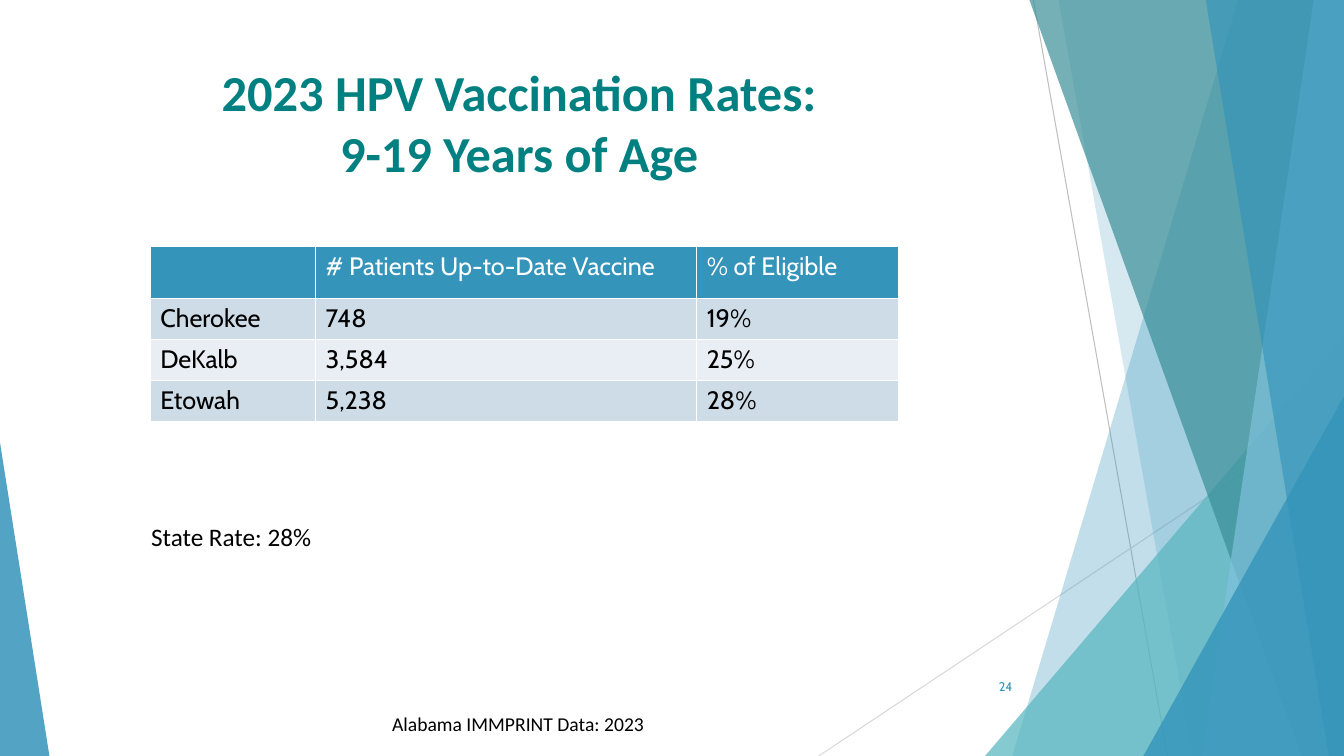
from lxml.etree import SubElement
from pptx import Presentation
from pptx.dml.color import RGBColor
from pptx.enum.shapes import MSO_CONNECTOR as Link, MSO_SHAPE as Shape
from pptx.enum.text import MSO_ANCHOR as Anchor, PP_ALIGN as Align
from pptx.oxml.ns import qn
from pptx.util import Inches, Pt

WIDTH, HEIGHT = 13.33, 7.5
BLUE, TEAL, BLACK, WHITE = "3494BA", "008080", "000000", "FFFFFF"
BANDS = ["CEDCE7", "E8EEF3"]
ROWS = [
    ["", "# Patients Up-to-Date Vaccine", "% of Eligible"],
    ["Cherokee", "748", "19%"],
    ["DeKalb", "3,584", "25%"],
    ["Etowah", "5,238", "28%"],
]


def color(code):
    return RGBColor.from_string(code)


def paint(shape, code, alpha):
    """Fill a shape without outline or shadow; alpha is in percent."""
    shape.shadow.inherit = False
    shape.line.fill.background()
    shape.fill.solid()
    shape.fill.fore_color.rgb = color(code)
    tone = shape.fill._xPr.find(".//" + qn("a:srgbClr"))
    SubElement(tone, qn("a:alpha")).set("val", str(alpha * 1000))


def style(para, size, face, code, bold=False, align=Align.LEFT):
    para.alignment = align
    font = para.font
    font.size, font.name, font.bold = Pt(size), face, bold
    font.color.rgb = color(code)


def ray(slide, start, end, code):
    line = slide.shapes.add_connector(
        Link.STRAIGHT, *(Inches(n) for n in (*start, *end)))
    line.line.width = Pt(0.75)
    line.line.color.rgb = color(code)
    SubElement(line._element.spPr, qn("a:effectLst"))


def slab(slide, head, foot, right, top, bottom, code, alpha):
    """Draw a slanted sheet that reaches the right edge."""
    points = [(Inches(x), Inches(y)) for x, y in (
        (head, top), (right, top), (right, bottom), (foot, bottom))]
    build = slide.shapes.build_freeform(*points[0])
    build.add_line_segments(points[1:], close=True)
    paint(build.convert_to_shape(), code, alpha)


def wedge(slide, left, top, width, height, peak, code, alpha):
    shape = slide.shapes.add_shape(
        Shape.ISOSCELES_TRIANGLE,
        *(Inches(n) for n in (left, top, width, height)))
    shape.adjustments[0] = peak
    paint(shape, code, alpha)


def add_decor(slide, left, top, width, height):
    """Rays and sheets on the right, one wedge on the left."""
    right, bottom = left + width, top + height

    def sheet(head, foot, code, alpha):
        slab(slide, right - head, right - foot, right, top, bottom,
             code, alpha)

    def corner(wide, high, code, alpha):
        wedge(slide, right - wide, bottom - high, wide, high, 1, code, alpha)

    ray(slide, (right - 3.08, top), (right - 1.75, bottom), "BFBFBF")
    ray(slide, (right, top + 4.03), (right - 5.21, bottom), "D9D9D9")
    sheet(1.05, 3.29, BLUE, 30)
    sheet(2.83, 1.5, BLUE, 20)
    corner(3.56, 4.17, "58B6C0", 72)
    sheet(3.12, 0.42, "3A8F98", 70)
    sheet(0.3, 1.41, "7FC1DB", 70)
    sheet(1.37, 0.15, BLUE, 65)
    corner(1.99, 3.57, BLUE, 80)
    wedge(slide, left, bottom - 3.11, 0.49, 3.11, 0, BLUE, 85)


def add_title(slide, left, top, width, height, text):
    title = slide.shapes.title
    title.left, title.top = Inches(left), Inches(top)
    title.width, title.height = Inches(width), Inches(height)
    frame = title.text_frame
    frame.vertical_anchor = Anchor.MIDDLE
    para = frame.paragraphs[0]
    para.text = text
    style(para, 36, "Calibri", TEAL, True, Align.CENTER)


def add_rates(slide, left, top, width, height):
    """Table of counties; the last column and rows share what is left."""
    table = slide.shapes.add_table(
        len(ROWS), len(ROWS[0]),
        *(Inches(n) for n in (left, top, width, height))).table
    first, second, head = 1.64, 3.78, 0.52
    for col, size in zip(table.columns, (first, second,
                                         width - first - second)):
        col.width = Inches(size)
    for i, row in enumerate(ROWS):
        table.rows[i].height = Inches(
            (height - head) / (len(ROWS) - 1) if i else head)
        for j, text in enumerate(row):
            cell = table.cell(i, j)
            cell.fill.solid()
            cell.fill.fore_color.rgb = color(
                BANDS[(i - 1) % 2] if i else BLUE)
            para = cell.text_frame.paragraphs[0]
            para.text = text
            style(para, 18, "Cabin", BLACK if i else WHITE)


def add_note(slide, left, top, width, height, text, size,
             face="Calibri", code=BLACK, align=Align.LEFT, anchor=Anchor.TOP):
    frame = slide.shapes.add_textbox(
        *(Inches(n) for n in (left, top, width, height))).text_frame
    frame.word_wrap = True
    frame.vertical_anchor = anchor
    para = frame.paragraphs[0]
    para.text = text
    style(para, size, face, code, align=align)


def main():
    deck = Presentation()
    deck.slide_width, deck.slide_height = Inches(WIDTH), Inches(HEIGHT)
    slide = deck.slides.add_slide(deck.slide_layouts[5])

    # Background decor, moved behind the title
    add_decor(slide, 0, 0, WIDTH, HEIGHT)
    tree = slide.shapes._spTree
    tree.append(slide.shapes.title._element)

    # Title and table
    add_title(slide, 0, 0.49, 10.3, 1.44,
              "2023 HPV Vaccination Rates:\n9-19 Years of Age")
    add_rates(slide, 1.49, 2.44, 7.42, 1.74)

    # Page number, state rate and data source
    add_note(slide, 9.39, 6.61, 0.75, 0.4, "24", 9, "Cabin", BLUE,
             Align.RIGHT, Anchor.MIDDLE)
    add_note(slide, 1.4, 5.12, 1.92, 0.4, "State Rate: 28%", 18)
    add_note(slide, 3.79, 7.01, 6.63, 0.34, "Alabama IMMPRINT Data: 2023", 14)
    deck.save("out.pptx")


if __name__ == "__main__":
    main()
